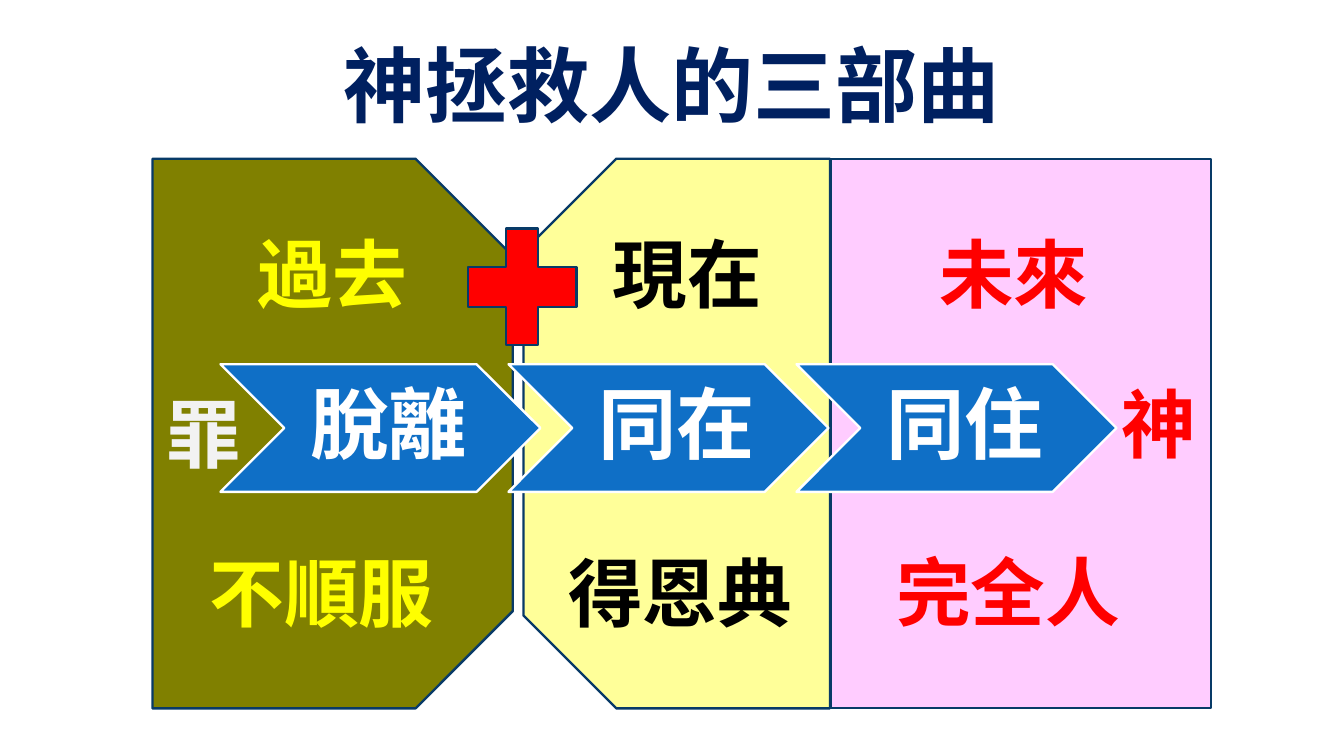
"""Build the slide on the three stages of salvation."""
import pptx
import pptx.util
import pptx.dml.color
import pptx.enum.shapes
import pptx.enum.text

Pt = pptx.util.Pt
SHAPE = pptx.enum.shapes.MSO_SHAPE
ALIGN = pptx.enum.text.PP_ALIGN
ANCHOR = pptx.enum.text.MSO_ANCHOR
FIT = pptx.enum.text.MSO_AUTO_SIZE

NAVY, RED, YELLOW, BLACK, WHITE = "083A67", "FF0000", "FFFF00", "000000", "FFFFFF"
TITLE = "神拯救人的三部曲"
PLAIN_ERA = (445, 203.8, "FFCCFF")
SNIPPED_ERAS = [
    (280.4, 164.2, "FFFF99", 270, 0.303),
    (81.7, 193, "808000", 90, 0.27),
]
CAPTIONS = [
    ("罪", 82.1, 204.5, "F2F2F2"),
    ("神", 594, 198.7, RED),
    ("得恩典", 297.4, 289.4, BLACK),
    ("完全人", 473, 288.7, RED),
    ("過去", 131, 118.8, YELLOW),
    ("現在", 321.1, 118.8, BLACK),
    ("未來", 496.1, 118.8, RED),
    ("不順服", 105.1, 289.4, YELLOW),
]
STEPS = ["脫離", "同在", "同住"]
ERA_TOP, ERA_HEIGHT = 85, 294.5
STEP_LEFT, STEP_TOP, STEP_WIDTH, STEP_HEIGHT, STEP_PITCH = 118.1, 195.1, 171.4, 68.4, 154.3


def rgb(code):
    return pptx.dml.color.RGBColor.from_string(code)


def add_outline(kind, left, top, width, height, fill, line=NAVY):
    shape = slide.shapes.add_shape(kind, Pt(left), Pt(top), Pt(width), Pt(height))
    shape.shadow.inherit = False
    shape.fill.solid()
    shape.fill.fore_color.rgb = rgb(fill)
    shape.line.color.rgb = rgb(line)
    shape.line.width = Pt(1.25)
    return shape


def add_words(words, left, top, width, height, size, color, align=None):
    frame = slide.shapes.add_textbox(Pt(left), Pt(top), Pt(width), Pt(height)).text_frame
    frame.word_wrap = True
    frame.text = words
    paragraph = frame.paragraphs[0]
    paragraph.alignment = align
    font = paragraph.runs[0].font
    font.name, font.size, font.bold = "Calibri", Pt(size), True
    font.color.rgb = rgb(color)
    return frame


deck = pptx.Presentation()
deck.slide_width, deck.slide_height = Pt(720), Pt(405)
slide = deck.slides.add_slide(deck.slide_layouts[6])

left, width, fill = PLAIN_ERA
add_outline(SHAPE.RECTANGLE, left, ERA_TOP, width, ERA_HEIGHT, fill)
for left, width, fill, turn, snip in SNIPPED_ERAS:
    shift = (ERA_HEIGHT - width) / 2
    era = add_outline(SHAPE.SNIP_2_SAME_RECTANGLE, left - shift, ERA_TOP + shift,
                      ERA_HEIGHT, width, fill)
    era.rotation = turn
    era.adjustments[0], era.adjustments[1] = snip, 0

for words, left, top, color in CAPTIONS:
    caption = add_words(words, left, top, 14.4 + 40.3 * len(words), 55.4, 40, color)
    caption.word_wrap = False
    caption.auto_size = FIT.SHAPE_TO_FIT_TEXT

add_words(TITLE, 36, 15.1, 648, 74.2, 44, "002060", ALIGN.CENTER)

for index, words in enumerate(STEPS):
    left = STEP_LEFT + index * STEP_PITCH
    add_outline(SHAPE.CHEVRON, left, STEP_TOP, STEP_WIDTH, STEP_HEIGHT, "0F6FC6", WHITE)
    step = add_words(words, left + STEP_HEIGHT / 2, STEP_TOP, STEP_WIDTH - STEP_HEIGHT,
                     STEP_HEIGHT, 42, WHITE, ALIGN.CENTER)
    step.vertical_anchor = ANCHOR.MIDDLE
    step.margin_left = Pt(13)
    step.margin_right = step.margin_top = step.margin_bottom = Pt(4.3)
    step.paragraphs[0].line_spacing = 0.9

cross = add_outline(SHAPE.CROSS, 250.6, 122.4, 58.3, 62.6, RED)
cross.adjustments[0] = 0.352

deck.save("out.pptx")
